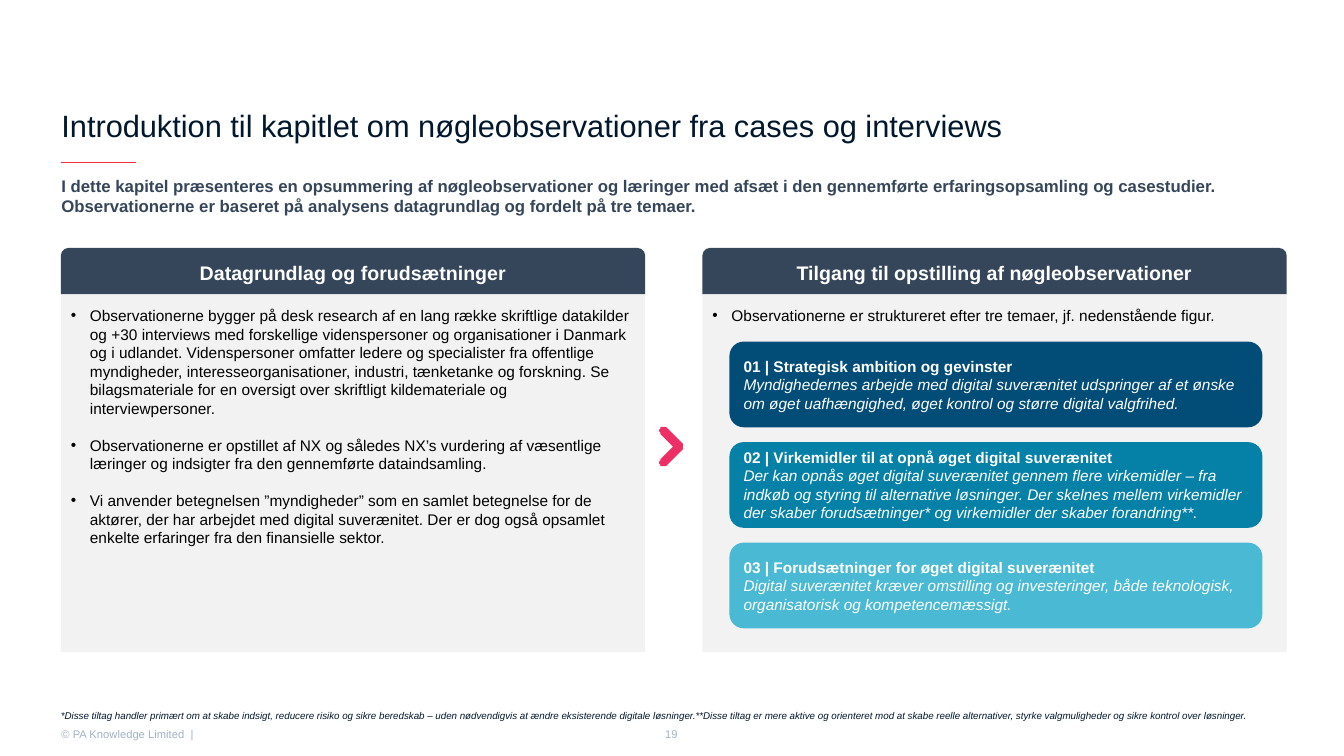
from math import cos, radians, sin, sqrt

from lxml.etree import SubElement
from pptx import Presentation
from pptx.dml.color import RGBColor
from pptx.enum.shapes import MSO_CONNECTOR, MSO_SHAPE
from pptx.enum.text import MSO_ANCHOR, PP_ALIGN
from pptx.oxml.ns import qn
from pptx.util import Pt

FONT = "Arial"
WHITE = RGBColor(0xFF, 0xFF, 0xFF)
BLACK = RGBColor(0x00, 0x00, 0x00)
NAVY = RGBColor(0x00, 0x17, 0x2D)
SLATE = RGBColor(0x36, 0x46, 0x5A)
MIST = RGBColor(0xA2, 0xB3, 0xC9)
PANEL_GREY = RGBColor(0xF2, 0xF2, 0xF2)
RED = RGBColor(0xF6, 0x2B, 0x44)
PINK = RGBColor(0xEE, 0x2F, 0x66)
DEEP_BLUE = RGBColor(0x02, 0x4D, 0x78)
MID_BLUE = RGBColor(0x05, 0x80, 0xA7)
LIGHT_BLUE = RGBColor(0x4A, 0xB9, 0xD3)

MARGIN = 43.9
PANEL_WIDTH = 417.6
PANEL_TOP = 177.1
HEADER_HEIGHT = 33.1
BODY_HEIGHT = 255.6
CARD_LEFT = 521.3
CARD_TOP = 244
CARD_STEP = 71.8
CARD_SIZE = (380.9, 61.2)

PANELS = [
    (43.5, "Datagrundlag og forudsætninger", [
        "Observationerne bygger på desk research af en lang række skriftlige datakilder og +30 "
        "interviews med forskellige videnspersoner og organisationer i Danmark og i udlandet. "
        "Videnspersoner omfatter ledere og specialister fra offentlige myndigheder, "
        "interesseorganisationer, industri, tænketanke og forskning. Se bilagsmateriale for en "
        "oversigt over skriftligt kildemateriale og interviewpersoner.",
        "Observationerne er opstillet af NX og således NX’s vurdering af væsentlige læringer og "
        "indsigter fra den gennemførte dataindsamling.",
        "Vi anvender betegnelsen ”myndigheder” som en samlet betegnelse for de aktører, der har "
        "arbejdet med digital suverænitet. Der er dog også opsamlet enkelte erfaringer fra den "
        "finansielle sektor.",
    ]),
    (502, "Tilgang til opstilling af nøgleobservationer", [
        "Observationerne er struktureret efter tre temaer, jf. nedenstående figur.",
    ]),
]

THEMES = [
    (DEEP_BLUE, "01 | Strategisk ambition og gevinster",
     "Myndighedernes arbejde med digital suverænitet udspringer af et ønske om øget "
     "uafhængighed, øget kontrol og større digital valgfrihed."),
    (MID_BLUE, "02 | Virkemidler til at opnå øget digital suverænitet",
     "Der kan opnås øget digital suverænitet gennem flere virkemidler – fra indkøb og styring "
     "til alternative løsninger. Der skelnes mellem virkemidler der skaber forudsætninger* og "
     "virkemidler der skaber forandring**."),
    (LIGHT_BLUE, "03 | Forudsætninger for øget digital suverænitet",
     "Digital suverænitet kræver omstilling og investeringer, både teknologisk, "
     "organisatorisk og kompetencemæssigt."),
]

TITLE = "Introduktion til kapitlet om nøgleobservationer fra cases og interviews"
LEAD = (
    "I dette kapitel præsenteres en opsummering af nøgleobservationer og læringer med afsæt i "
    "den gennemførte erfaringsopsamling og casestudier. Observationerne er baseret på analysens "
    "datagrundlag og fordelt på tre temaer."
)
FOOTNOTE = (
    "*Disse tiltag handler primært om at skabe indsigt, reducere risiko og sikre beredskab – "
    "uden nødvendigvis at ændre eksisterende digitale løsninger.**Disse tiltag er mere aktive "
    "og orienteret mod at skabe reelle alternativer, styrke valgmuligheder og sikre kontrol "
    "over løsninger."
)


def prepare_frame(shape, insets=(7.2, 3.6, 7.2, 3.6), anchor=MSO_ANCHOR.TOP):
    """Set wrapping, insets and anchor of a shape's text frame and return it."""
    frame = shape.text_frame
    frame.word_wrap = True
    frame.vertical_anchor = anchor
    frame.margin_left, frame.margin_top, frame.margin_right, frame.margin_bottom = map(Pt, insets)
    return frame


def add_text(frame, text, size=11, color=BLACK, bold=False, italic=False,
             align=PP_ALIGN.LEFT, bullet=False, gap=0):
    """Write one formatted paragraph into a frame, reusing an empty first paragraph."""
    first = frame.paragraphs[0]
    paragraph = frame.add_paragraph() if first.runs else first
    if bullet:
        properties = paragraph._p.get_or_add_pPr()
        properties.set("marL", str(Pt(13.7)))
        properties.set("indent", str(Pt(-13.7)))
        SubElement(properties, qn("a:buFont"), typeface=FONT)
        SubElement(properties, qn("a:buChar"), char="•")
    if gap:
        paragraph.space_before = Pt(gap)
    paragraph.alignment = align
    run = paragraph.add_run()
    run.text = text
    run.font.name = FONT
    run.font.size = Pt(size)
    run.font.bold = bold
    run.font.italic = italic
    run.font.color.rgb = color


def add_label(slide, box, text, insets=(0, 3.6, 0, 3.6), anchor=MSO_ANCHOR.TOP, **style):
    """Add a text box holding one paragraph."""
    shape = slide.shapes.add_textbox(*map(Pt, box))
    add_text(prepare_frame(shape, insets, anchor), text, **style)


def paint(shape, color):
    """Give a shape a plain fill without outline or shadow."""
    shape.shadow.inherit = False
    shape.fill.solid()
    shape.fill.fore_color.rgb = color
    shape.line.fill.background()


def add_block(slide, preset, box, color):
    """Add a filled preset shape."""
    shape = slide.shapes.add_shape(preset, *map(Pt, box))
    paint(shape, color)
    return shape


def add_panel(slide, left, heading, points):
    """Add a panel with a header bar and bulleted body."""
    header = add_block(slide, MSO_SHAPE.ROUND_2_SAME_RECTANGLE,
                       (left, PANEL_TOP, PANEL_WIDTH, HEADER_HEIGHT), SLATE)
    add_text(prepare_frame(header, anchor=MSO_ANCHOR.MIDDLE), heading, size=14,
             color=WHITE, bold=True, align=PP_ALIGN.CENTER)
    body = add_block(slide, MSO_SHAPE.RECTANGLE,
                     (left, PANEL_TOP + HEADER_HEIGHT, PANEL_WIDTH, BODY_HEIGHT), PANEL_GREY)
    frame = prepare_frame(body, (7.2, 8.6, 7.2, 3.6))
    for index, point in enumerate(points):
        add_text(frame, point, bullet=True, gap=13.2 if index else 0)


def add_theme_card(slide, index, color, heading, description):
    """Add one rounded theme card at its place in the column."""
    box = (CARD_LEFT, CARD_TOP + index * CARD_STEP, *CARD_SIZE)
    card = add_block(slide, MSO_SHAPE.ROUNDED_RECTANGLE, box, color)
    frame = prepare_frame(card, anchor=MSO_ANCHOR.MIDDLE)
    add_text(frame, heading, color=WHITE, bold=True)
    add_text(frame, description, color=WHITE, italic=True)


def add_chevron(slide, tip_x, tip_y, arm, radius):
    """Add a right-pointing chevron with rounded ends."""
    arcs = [
        (tip_x - arm, tip_y - arm, 135, 315),
        (tip_x, tip_y, -45, 45),
        (tip_x - arm, tip_y + arm, 45, 225),
    ]
    outline = [
        (x + radius * cos(radians(angle)), y + radius * sin(radians(angle)))
        for x, y, start, end in arcs
        for angle in range(start, end + 1, 15)
    ]
    builder = slide.shapes.build_freeform(tip_x - radius * sqrt(2), tip_y, scale=Pt(1))
    builder.add_line_segments(outline, close=True)
    paint(builder.convert_to_shape(), PINK)


def add_rule(slide, left, top, width):
    """Add the thin red line under the title."""
    rule = slide.shapes.add_connector(
        MSO_CONNECTOR.STRAIGHT, Pt(left), Pt(top), Pt(left + width), Pt(top))
    rule.line.color.rgb = RED
    rule.line.width = Pt(1)
    SubElement(rule._element.spPr, qn("a:effectLst"))


def main():
    """Build the slide and save it."""
    presentation = Presentation()
    presentation.slide_width = Pt(960.48)
    presentation.slide_height = Pt(540)
    slide = presentation.slides.add_slide(presentation.slide_layouts[6])

    add_label(slide, (465.8, 516.2, 28, 16.6), "19", anchor=MSO_ANCHOR.MIDDLE,
              size=8, color=MIST, align=PP_ALIGN.CENTER)
    add_label(slide, (MARGIN, 516.2, 99.4, 17.3), "© PA Knowledge Limited  |", size=8, color=MIST)
    add_rule(slide, MARGIN, 116, 53.3)
    add_label(slide, (MARGIN, 40.3, 873.4, 62.6), TITLE, insets=(0, 0, 7.9, 0),
              anchor=MSO_ANCHOR.BOTTOM, size=22, color=NAVY)
    add_label(slide, (MARGIN, 121.7, 875.5, 51.1), LEAD, size=12, color=SLATE, bold=True)
    for panel in PANELS:
        add_panel(slide, *panel)
    add_chevron(slide, 485.6, 319, 11.5, 2.9)
    for index, theme in enumerate(THEMES):
        add_theme_card(slide, index, *theme)
    add_label(slide, (43.5, 506.9, 902.9, 7.9), FOOTNOTE, insets=(0, 0, 0, 0),
              size=7, color=NAVY, italic=True)

    presentation.save("out.pptx")


if __name__ == "__main__":
    main()
